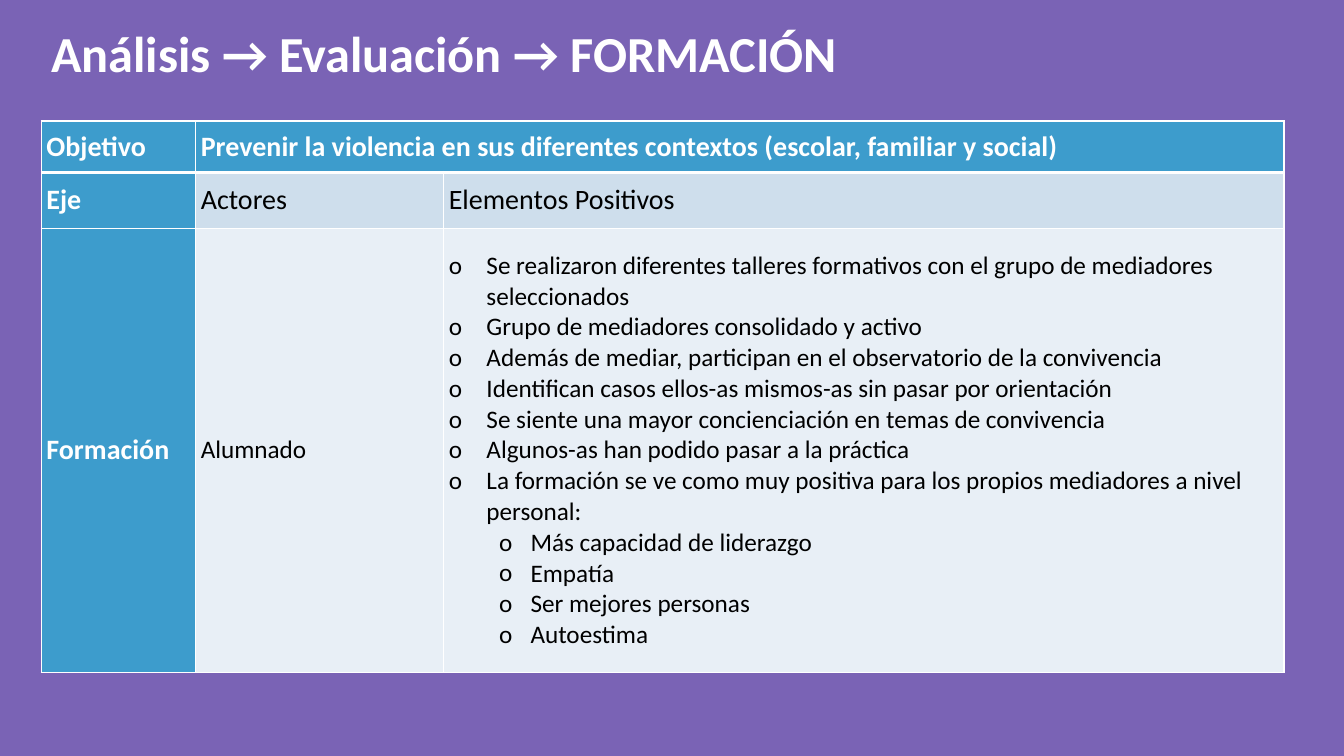
from dataclasses import dataclass

from lxml.etree import SubElement
from pptx import Presentation
from pptx.dml.color import RGBColor
from pptx.enum.text import MSO_ANCHOR
from pptx.oxml import parse_xml
from pptx.oxml.ns import nsdecls, qn
from pptx.table import _Cell
from pptx.text.text import _Paragraph
from pptx.util import Cm, Pt


@dataclass(frozen=True)
class Theme:
    font: str = "Calibri"
    background: str = "7A63B5"
    accent: str = "3D9CCC"
    band: str = "CEDEEC"
    light: str = "E8EFF6"
    white: str = "FFFFFF"
    black: str = "000000"
    title_size: int = 36
    heading_size: int = 20
    body_size: int = 18
    thin_border: int = 1
    thick_border: int = 3


@dataclass(frozen=True)
class Line:
    text: str
    level: int | None = None  # bullet level; None means no bullet


@dataclass(frozen=True)
class CellContent:
    row: int
    column: int
    lines: tuple[Line, ...]
    fill: str
    size: int
    heading: bool = False


THEME = Theme()
COLUMN_WIDTHS = (3.89, 6.25, 21.18)
ROW_HEIGHTS = (1.3, 1.4, 11.2)
BULLET_INDENTS = ((0.95, -0.95), (2.06, -0.79))  # left margin, hanging indent

POSITIVES = (
    Line("Se realizaron diferentes talleres formativos con el grupo de mediadores seleccionados", 0),
    Line("Grupo de mediadores consolidado y activo", 0),
    Line("Además de mediar, participan en el observatorio de la convivencia", 0),
    Line("Identifican casos ellos-as mismos-as sin pasar por orientación", 0),
    Line("Se siente una mayor concienciación en temas de convivencia", 0),
    Line("Algunos-as han podido pasar a la práctica", 0),
    Line("La formación se ve como muy positiva para los propios mediadores a nivel personal:", 0),
    Line("Más capacidad de liderazgo", 1),
    Line("Empatía", 1),
    Line("Ser mejores personas", 1),
    Line("Autoestima", 1),
)

CELLS = (
    CellContent(0, 0, (Line("Objetivo"),), THEME.accent, THEME.heading_size, True),
    CellContent(
        0, 1,
        (Line("Prevenir la violencia en sus diferentes contextos (escolar, familiar y social)"),),
        THEME.accent, THEME.heading_size, True,
    ),
    CellContent(1, 0, (Line("Eje"),), THEME.accent, THEME.heading_size, True),
    CellContent(1, 1, (Line("Actores"),), THEME.band, THEME.heading_size),
    CellContent(1, 2, (Line("Elementos Positivos"),), THEME.band, THEME.heading_size),
    CellContent(2, 0, (Line("Formación"),), THEME.accent, THEME.heading_size, True),
    CellContent(2, 1, (Line("Alumnado"),), THEME.light, THEME.body_size),
    CellContent(2, 2, POSITIVES, THEME.light, THEME.body_size),
)


def add_span(para: _Paragraph, text: str, size: int, color: str, bold: bool) -> None:
    span = para.add_run()
    span.text = text
    for name, value in {"name": THEME.font, "size": Pt(size), "bold": bold}.items():
        setattr(span.font, name, value)
    span.font.color.rgb = RGBColor.from_string(color)


def set_bullet(para: _Paragraph, level: int) -> None:
    para.level = level
    left, indent = BULLET_INDENTS[level]
    properties = para._p.get_or_add_pPr()
    properties.set("marL", str(int(Cm(left))))
    properties.set("indent", str(int(Cm(indent))))
    SubElement(properties, qn("a:buFont"), typeface=THEME.font)
    SubElement(properties, qn("a:buChar"), char="o")


def set_borders(cell: _Cell, row: int) -> None:
    """Draw white borders, with a thick rule below the first row."""
    widths = {
        "lnL": THEME.thin_border,
        "lnR": THEME.thin_border,
        "lnT": THEME.thick_border if row == 1 else THEME.thin_border,
        "lnB": THEME.thick_border if row == 0 else THEME.thin_border,
    }
    properties = cell._tc.get_or_add_tcPr()
    for position, (side, width) in enumerate(widths.items()):
        border = parse_xml(
            f'<a:{side} {nsdecls("a")} w="{int(Pt(width))}"><a:solidFill>'
            f'<a:srgbClr val="{THEME.white}"/></a:solidFill></a:{side}>'
        )
        properties.insert(position, border)


def paint_cell(cell: _Cell, row: int, fill: str) -> None:
    cell.fill.solid()
    cell.fill.fore_color.rgb = RGBColor.from_string(fill)
    set_borders(cell, row)


def fill_cell(cell: _Cell, content: CellContent) -> None:
    formats = {
        "vertical_anchor": MSO_ANCHOR.MIDDLE,
        "margin_left": Cm(0.13),
        "margin_right": Cm(0.13),
        "margin_top": 0,
        "margin_bottom": 0,
    }
    for name, value in formats.items():
        setattr(cell, name, value)
    paint_cell(cell, content.row, content.fill)
    color = THEME.white if content.heading else THEME.black
    for index, line in enumerate(content.lines):
        frame = cell.text_frame
        para = frame.add_paragraph() if index else frame.paragraphs[0]
        if line.level is not None:
            set_bullet(para, line.level)
        add_span(para, line.text, content.size, color, content.heading)


def main() -> None:
    deck = Presentation()
    deck.slide_width, deck.slide_height = Cm(33.87), Cm(19.05)
    page = deck.slides.add_slide(deck.slide_layouts[6])
    page.background.fill.solid()
    page.background.fill.fore_color.rgb = RGBColor.from_string(THEME.background)

    # Objective and training table
    table = page.shapes.add_table(
        len(ROW_HEIGHTS), len(COLUMN_WIDTHS), Cm(1.04), Cm(3.05),
        Cm(sum(COLUMN_WIDTHS)), Cm(sum(ROW_HEIGHTS)),
    ).table
    table.first_row = table.horz_banding = False
    for column, width in zip(table.columns, COLUMN_WIDTHS):
        column.width = Cm(width)
    for row, height in zip(table.rows, ROW_HEIGHTS):
        row.height = Cm(height)
    table.cell(0, 1).merge(table.cell(0, 2))
    paint_cell(table.cell(0, 2), 0, THEME.accent)
    for content in CELLS:
        fill_cell(table.cell(content.row, content.column), content)

    # Title
    box = page.shapes.add_textbox(Cm(1.04), Cm(0.33), Cm(32.41), Cm(1.9))
    frame = box.text_frame
    frame.word_wrap = True
    frame.vertical_anchor = MSO_ANCHOR.BOTTOM
    para = frame.paragraphs[0]
    para.line_spacing = 0.9
    add_span(para, "Análisis → Evaluación → FORMACIÓN", THEME.title_size, THEME.white, True)

    deck.save("out.pptx")


if __name__ == "__main__":
    main()
